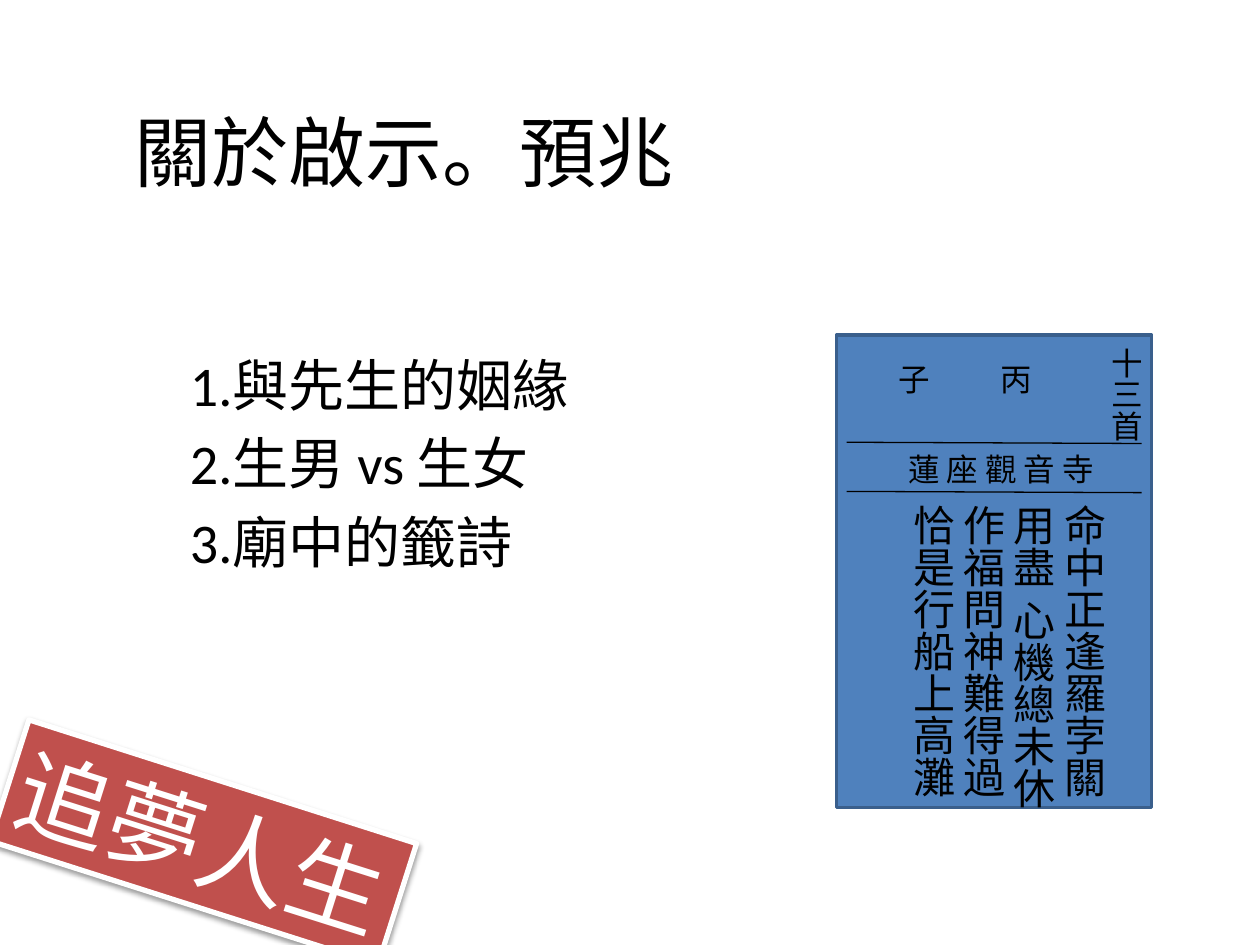
"""Build the slide on revelations and omens with a temple fortune slip."""
from lxml import etree
from pptx import Presentation
from pptx.dml.color import RGBColor
from pptx.enum.shapes import MSO_CONNECTOR, MSO_SHAPE
from pptx.enum.text import MSO_ANCHOR, MSO_AUTO_SIZE, PP_ALIGN
from pptx.oxml import parse_xml
from pptx.oxml.ns import nsdecls, qn
from pptx.util import Inches, Pt

COLORS = {
    "text": "000000",
    "white": "FFFFFF",
    "banner": "C0504D",
    "slip": "4F81BD",
    "slip_edge": "3A5F8C",
}


def write_text(shape, lines, size, color="text", wrap=False, vertical=False):
    frame = shape.text_frame
    frame.word_wrap = wrap
    frame.auto_size = MSO_AUTO_SIZE.NONE if wrap else MSO_AUTO_SIZE.SHAPE_TO_FIT_TEXT
    frame.text = "\n".join(lines)
    if vertical:
        frame._txBody.bodyPr.set("vert", "eaVert")
    for paragraph in frame.paragraphs:
        paragraph.alignment = PP_ALIGN.LEFT
        paragraph.font.name = "Calibri"
        paragraph.font.size = Pt(size)
        paragraph.font.color.rgb = RGBColor.from_string(COLORS[color])
    return frame


def add_rectangle(parent, box, fill, edge, width):
    shape = parent.add_shape(MSO_SHAPE.RECTANGLE, *map(Inches, box))
    shape.shadow.inherit = False
    shape.fill.solid()
    shape.fill.fore_color.rgb = RGBColor.from_string(COLORS[fill])
    shape.line.color.rgb = RGBColor.from_string(COLORS[edge])
    shape.line.width = Pt(width)
    return shape


presentation = Presentation()
presentation.slide_width = Inches(10)
presentation.slide_height = Inches(7.5)
slide = presentation.slides.add_slide(presentation.slide_layouts[6])

title = slide.shapes.add_textbox(*map(Inches, (0.39, 0.39, 5.63, 1.61)))
title_frame = write_text(title, ["關於啟示。預兆"], 44, wrap=True)
title_frame.vertical_anchor = MSO_ANCHOR.MIDDLE
title_frame.paragraphs[0].alignment = PP_ALIGN.CENTER

topics = slide.shapes.add_textbox(*map(Inches, (1.41, 2.73, 4.84, 1.92)))
topic_lines = ["1.與先生的姻緣", "2.生男 vs 生女", "3.廟中的籤詩"]
for paragraph in write_text(topics, topic_lines, 32, wrap=True).paragraphs:
    paragraph.space_before = Pt(6.4)

banner = add_rectangle(slide.shapes, (0, 6.18, 3.23, 1.01), "banner", "white", 3)
banner.rotation = 17.7
write_text(banner, ["追夢人生"], 54, "white")
effects = banner._element.spPr.find(qn("a:effectLst"))
effects.append(parse_xml(
    f'<a:outerShdw {nsdecls("a")} blurRad="{Pt(3.1)}" dist="{Pt(1.6)}" dir="5400000" '
    f'rotWithShape="0"><a:srgbClr val="{COLORS["text"]}"><a:alpha val="38000"/>'
    '</a:srgbClr></a:outerShdw>'
))

slip = slide.shapes.add_group_shape().shapes
add_rectangle(slip, (6.64, 2.66, 2.5, 3.75), "slip", "slip_edge", 2)

poem = ["命中正逢羅孛關", "用盡 心機總未休", "作福問神難得過", "恰是行船上高灘"]
slip_texts = [
    ((7.03, 3.91, 1.82, 2.53), poem, 24, True),
    ((8.64, 2.66, 0.5, 0.86), ["十三首"], 18, True),
    ((7.03, 2.81, 1.29, 0.4), ["子\t丙"], 18, False),
    ((7.11, 3.52, 1.7, 0.4), ["蓮 座 觀 音 寺"], 18, False),
]
for box, lines, size, vertical in slip_texts:
    text_box = slip.add_textbox(*map(Inches, box))
    frame = write_text(text_box, lines, size, vertical=vertical)
    if "\t" in lines[0]:
        properties = frame.paragraphs[0]._p.get_or_add_pPr()
        tabs = etree.Element(qn("a:tabLst"))
        etree.SubElement(tabs, qn("a:tab"), pos=str(Inches(0.81)), algn="l")
        properties.find(qn("a:defRPr")).addprevious(tabs)

for top in (3.51, 3.9):
    ends = map(Inches, (6.72, top, 9.06, top + 0.01))
    divider = slip.add_connector(MSO_CONNECTOR.STRAIGHT, *ends)
    divider.line.color.rgb = RGBColor.from_string(COLORS["text"])
    divider.line.width = Pt(0.75)
    etree.SubElement(divider._element.spPr, qn("a:effectLst"))

presentation.save("out.pptx")
